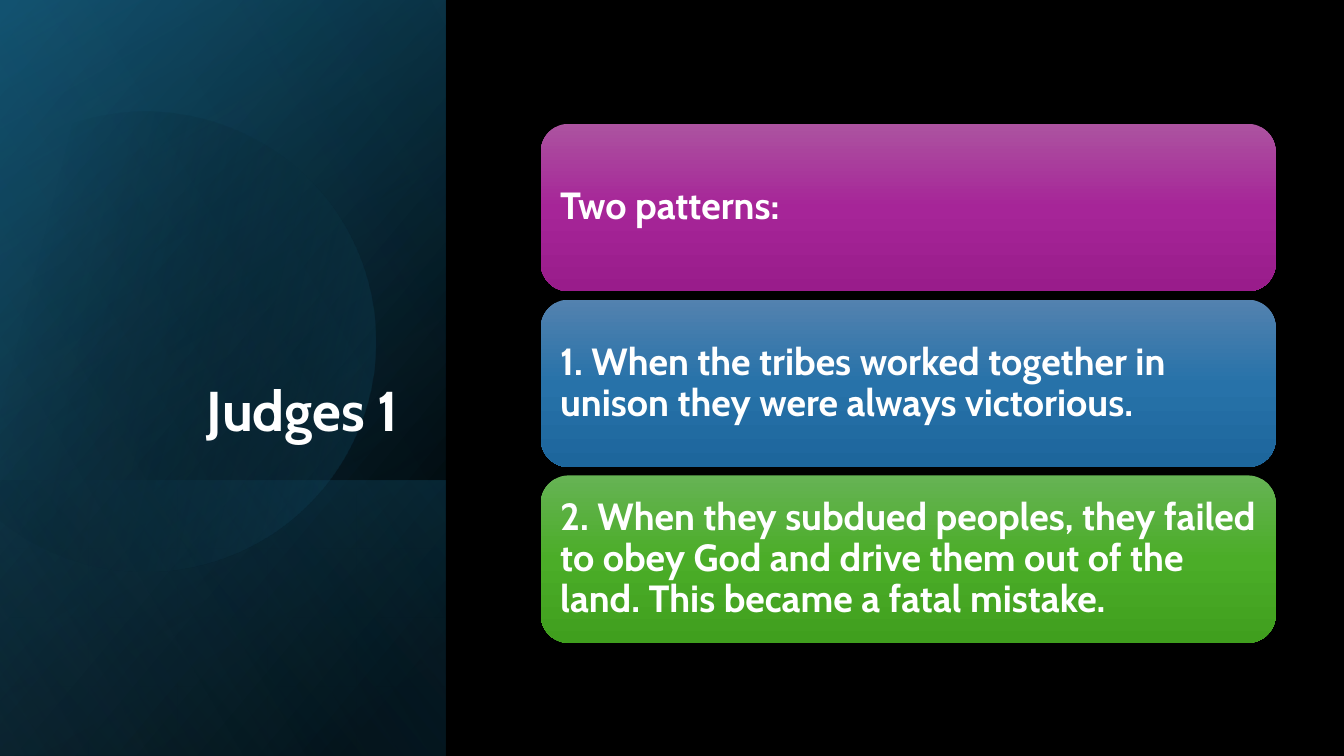
import math
from itertools import pairwise
from pptx import Presentation
from pptx.dml.color import RGBColor
from pptx.enum import shapes as s, text as t
from pptx.oxml import parse_xml
from pptx.oxml.ns import nsdecls, qn
from pptx.util import Cm, Pt

BLACK = RGBColor(0x00, 0x00, 0x00)
WHITE = RGBColor(0xFF, 0xFF, 0xFF)
NAVY = RGBColor(0x10, 0x48, 0x62)
TEAL = RGBColor(0x15, 0x60, 0x82)
SKY = RGBColor(0x46, 0xB1, 0xE1)
PURPLE = [RGBColor(0xAC, 0x53, 0xA0), RGBColor(0xA6, 0x25, 0x98), RGBColor(0x99, 0x1C, 0x8B)]
BLUE = [RGBColor(0x53, 0x82, 0xAF), RGBColor(0x27, 0x72, 0xA9), RGBColor(0x1D, 0x66, 0x9C)]
GREEN = [RGBColor(0x66, 0xB3, 0x54), RGBColor(0x4B, 0xAD, 0x28), RGBColor(0x40, 0x9F, 0x1E)]

CARDS = [
    ("Two patterns:", PURPLE),
    ("1. When the tribes worked together in unison they were always victorious.", BLUE),
    ("2. When they subdued peoples, they failed to obey God and drive them out "
     "of the land. This became a fatal mistake.", GREEN),
]


def shade(shape, angle, stops):
    """Fill with a gradient; each stop is (position %, colour, opacity %)."""
    marks = "".join(
        f'<a:gs pos="{pos * 1000}"><a:srgbClr val="{color}">'
        f'<a:alpha val="{alpha * 1000}"/></a:srgbClr></a:gs>'
        for pos, color, alpha in stops)
    grad = parse_xml(
        f'<a:gradFill {nsdecls("a")} rotWithShape="1"><a:gsLst>{marks}</a:gsLst>'
        f'<a:lin ang="{angle * 60000}" scaled="0"/></a:gradFill>')
    shape.fill.background()
    props = shape._element.spPr
    props.replace(props.find(qn("a:noFill")), grad)
    shape.line.fill.background()
    shape.shadow.inherit = False


def write(shape, words, size, align, anchor, side, edge):
    """Set the text, with side insets left and right, edge insets above and below."""
    frame = shape.text_frame
    frame.word_wrap = True
    frame.auto_size = t.MSO_AUTO_SIZE.NONE
    frame.vertical_anchor = anchor
    frame.margin_left = frame.margin_right = side
    frame.margin_top = frame.margin_bottom = edge
    para = frame.paragraphs[0]
    para.alignment = align
    para.line_spacing = 0.9
    run = para.add_run()
    run.text = words
    run.font.name = "Cabin"
    run.font.size = Pt(size)
    run.font.bold = True
    run.font.color.rgb = WHITE


def layer(slide, box, angle, stops):
    """Cover the box with a gradient sheet turned a quarter and mirrored."""
    x, y, w, h = box
    sheet = slide.shapes.add_shape(
        s.MSO_SHAPE.RECTANGLE, x + (w - h) // 2, y + (h - w) // 2, h, w)
    sheet.rotation = 90
    sheet._element.spPr.xfrm.set("flipH", "1")
    shade(sheet, angle, stops)


def bend(shape):
    """Turn each three line segments of the outline into one Bezier curve."""
    lines = list(shape._element.iter(qn("a:lnTo")))
    for i in range(0, len(lines), 3):
        curve = parse_xml(f'<a:cubicBezTo {nsdecls("a")}/>')
        lines[i].addprevious(curve)
        for line in lines[i:i + 3]:
            curve.append(line[0])
            line.getparent().remove(line)


def disc(slide, box):
    """Draw a faint circle, cut off just beyond the left edge of the box."""
    x, y, r = box[0] + Cm(3.64), box[1] + Cm(8.5), Cm(5.8)

    def spot(angle, pull=0):
        """Point on the circle, pulled along its tangent."""
        c, d = math.cos(angle), math.sin(angle)
        return x + r * (c - pull * d), y + r * (d + pull * c)

    turns = [math.radians(a) for a in (-118, -90, 0, 90, 150)]
    points = []
    for a, b in pairwise(turns):
        pull = 4 / 3 * math.tan((b - a) / 4)
        points += [spot(a, pull), spot(b, -pull), spot(b)]
    path = slide.shapes.build_freeform(*spot(turns[0]), scale=1.0)
    path.add_line_segments(points, close=True)
    circle = path.convert_to_shape()
    bend(circle)
    circle.rotation = 343.9
    shade(circle, 30, [(29, BLACK, 0), (100, TEAL, 43)])


def panel(slide, box):
    x, y, w, h = box
    foot = Cm(6.95)
    layer(slide, box, 50, [(8, BLACK, 100), (100, NAVY, 100)])
    layer(slide, box, 30, [(0, BLACK, 0), (99, TEAL, 46)])
    layer(slide, (x, y + h - foot, w, foot), 130, [(2, TEAL, 29), (100, BLACK, 30)])
    disc(slide, box)
    layer(slide, box, 120, [(0, BLACK, 0), (99, SKY, 11)])


def heading(slide, box, words):
    title = slide.shapes.title
    title.left, title.top, title.width, title.height = box
    # Bring the title in front of the panel
    slide.shapes._spTree.append(title._element)
    write(title, words, 40, t.PP_ALIGN.RIGHT, t.MSO_ANCHOR.BOTTOM, Cm(0.25), Cm(0.13))


def cards(slide, box):
    x, y, w, h = box
    gap, pad = Cm(0.21), Cm(0.28)
    tall = (h - gap * (len(CARDS) - 1)) // len(CARDS)
    for i, (words, tones) in enumerate(CARDS):
        card = slide.shapes.add_shape(
            s.MSO_SHAPE.ROUNDED_RECTANGLE, x, y + i * (tall + gap), w, tall)
        shade(card, 90, [(50 * k, tone, 100) for k, tone in enumerate(tones)])
        write(card, words, 27, t.PP_ALIGN.LEFT, t.MSO_ANCHOR.MIDDLE, pad, pad)


def main():
    deck = Presentation()
    deck.slide_width, deck.slide_height = Cm(33.87), Cm(19.05)
    slide = deck.slides.add_slide(deck.slide_layouts[5])
    back = slide.background.fill
    back.solid()
    back.fore_color.rgb = BLACK
    panel(slide, (0, 0, Cm(11.23), deck.slide_height))
    heading(slide, (Cm(1.63), Cm(4.67), Cm(8.66), Cm(6.65)), "Judges 1")
    cards(slide, (Cm(13.63), Cm(3.12), Cm(18.52), Cm(13.08)))
    deck.save("out.pptx")


if __name__ == "__main__":
    main()
